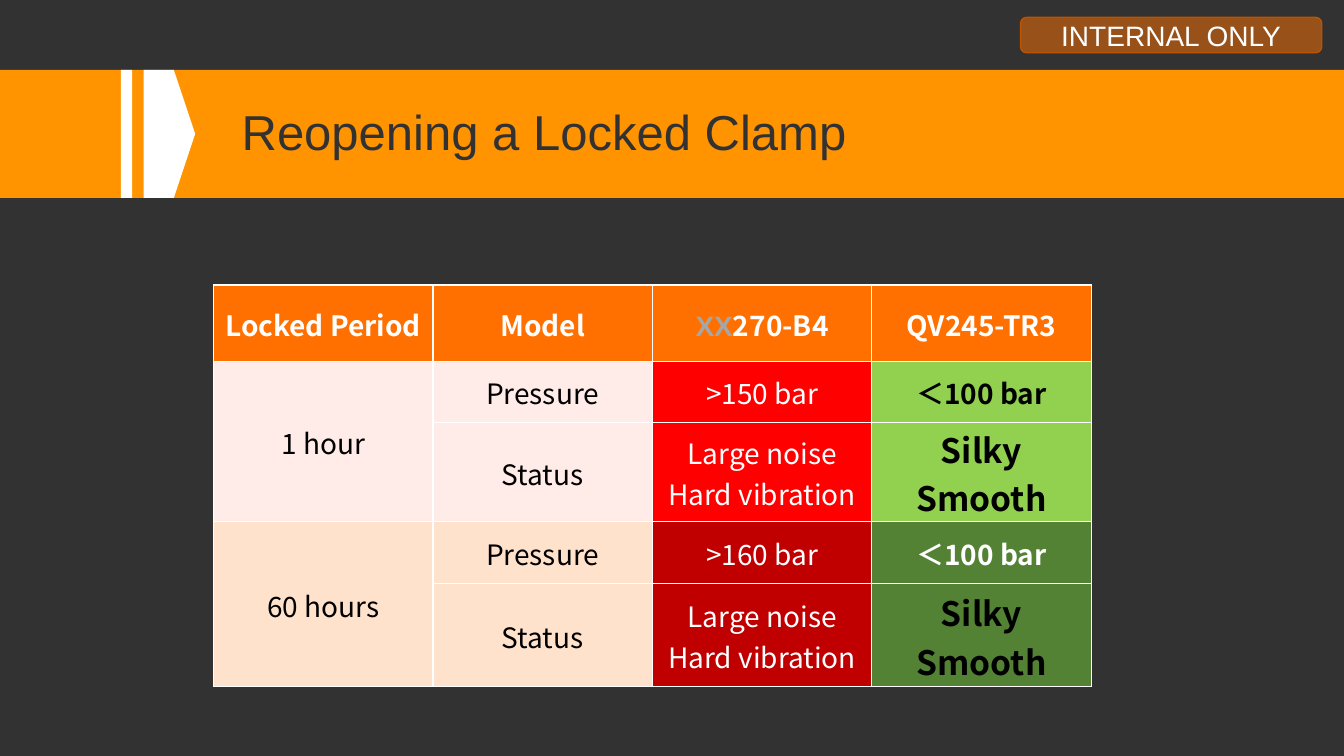
"""Build the slide comparing the reopening of locked clamps."""
from dataclasses import dataclass

import lxml.etree
import pptx
import pptx.dml.color
import pptx.enum.shapes
import pptx.enum.text
import pptx.oxml.ns
import pptx.shapes.autoshape
import pptx.slide
import pptx.table
import pptx.text.text
import pptx.util

Cm = pptx.util.Cm
qn = pptx.oxml.ns.qn
Shape = pptx.shapes.autoshape.Shape
Preset = pptx.enum.shapes.MSO_SHAPE
Align = pptx.enum.text.PP_ALIGN
Anchor = pptx.enum.text.MSO_ANCHOR


@dataclass(frozen=True)
class Theme:
    dark: str = "323232"
    white: str = "FFFFFF"
    black: str = "000000"
    grey: str = "A6A6A6"
    band: str = "FF9300"
    header: str = "FF7000"
    badge_line: str = "BD5300"
    hour_tint: str = "FFEBE7"
    hours_tint: str = "FFE2CC"
    hour_bad: str = "FF0000"
    hours_bad: str = "C00000"
    hour_good: str = "92D050"
    hours_good: str = "548235"
    title_size: float = 35
    body_size: float = 20
    strong_size: float = 24
    plain_font: str = "Arial"
    table_font: str = "Noto Sans CJK TC"


THEME = Theme()


@dataclass(frozen=True)
class Box:
    left: float
    top: float
    width: float
    height: float

    def lengths(self) -> tuple[pptx.util.Length, ...]:
        return Cm(self.left), Cm(self.top), Cm(self.width), Cm(self.height)


@dataclass(frozen=True)
class Words:
    text: str
    color: str
    size: float = THEME.body_size
    font: str = THEME.table_font
    bold: bool = False


@dataclass(frozen=True)
class Entry:
    fill: str
    lines: tuple[tuple[Words, ...], ...]
    rows: int = 1


@dataclass(frozen=True)
class Period:
    label: str
    bad_pressure: str
    tint: str
    bad: str
    good: str
    good_text: str


BAND = Box(0, 1.76, 33.87, 3.23)
STRIPE = Box(3.05, BAND.top, 0.28, BAND.height)
ARROW = Box(3.62, BAND.top, 1.3, BAND.height)
ARROW_SHOULDER = 0.76
TITLE = Box(5.84, 1.78, 25.7, BAND.height)
BADGE = Box(25.72, 0.44, 7.59, 0.89)
RESULTS = Box(5.38, 7.18, 22.12, 10.03)
ROW_HEIGHTS = (1.92, 1.54, 2.41, 1.55, 2.61)
COLUMN_COUNT = 4

PERIODS = (
    Period("1 hour", ">150 bar", THEME.hour_tint, THEME.hour_bad, THEME.hour_good, THEME.black),
    Period("60 hours", ">160 bar", THEME.hours_tint, THEME.hours_bad, THEME.hours_good, THEME.white),
)


def rgb(color: str) -> pptx.dml.color.RGBColor:
    return pptx.dml.color.RGBColor.from_string(color)


def write(paragraph: pptx.text.text._Paragraph, words: Words) -> None:
    run = paragraph.add_run()
    run.text = words.text
    run.font.size = pptx.util.Pt(words.size)
    run.font.name = words.font
    run.font.bold = words.bold
    run.font.color.rgb = rgb(words.color)
    east_asian = lxml.etree.Element(qn("a:ea"), typeface=words.font)
    run._r.rPr.find(qn("a:latin")).addnext(east_asian)


def paint(shape: Shape, color: str) -> None:
    shape.shadow.inherit = False
    shape.fill.solid()
    shape.fill.fore_color.rgb = rgb(color)
    shape.line.fill.background()


def add_block(slide: pptx.slide.Slide, preset: Preset, box: Box, color: str) -> Shape:
    block = slide.shapes.add_shape(preset, *box.lengths())
    paint(block, color)
    return block


def add_arrow(slide: pptx.slide.Slide) -> None:
    shoulder = ARROW.left + ARROW_SHOULDER
    bottom = ARROW.top + ARROW.height
    tip = (Cm(ARROW.left + ARROW.width), Cm(ARROW.top + ARROW.height / 2))
    outline = slide.shapes.build_freeform(Cm(ARROW.left), Cm(ARROW.top))
    outline.add_line_segments(
        [(Cm(ARROW.left), Cm(bottom)), (Cm(shoulder), Cm(bottom)), tip, (Cm(shoulder), Cm(ARROW.top))]
    )
    paint(outline.convert_to_shape(), THEME.white)


def add_badge(slide: pptx.slide.Slide) -> None:
    badge = add_block(slide, Preset.ROUNDED_RECTANGLE, BADGE, THEME.header)
    lxml.etree.SubElement(badge.element.spPr.find(".//" + qn("a:srgbClr")), qn("a:alpha"), val="50000")
    badge.line.color.rgb = rgb(THEME.badge_line)
    badge.line.width = pptx.util.Pt(1)
    badge.text_frame.vertical_anchor = Anchor.MIDDLE
    label = badge.text_frame.paragraphs[0]
    label.alignment = Align.CENTER
    write(label, Words("INTERNAL ONLY", THEME.white, font=THEME.plain_font))


def add_title(slide: pptx.slide.Slide) -> None:
    frame = slide.shapes.add_textbox(*TITLE.lengths()).text_frame
    frame.word_wrap = True
    frame.vertical_anchor = Anchor.MIDDLE
    heading = frame.paragraphs[0]
    heading.line_spacing = 0.9
    write(heading, Words("Reopening a Locked Clamp", THEME.dark, THEME.title_size, THEME.plain_font))


def header_row() -> list[Entry]:
    period, model, ours = (
        (Words(text, THEME.white, bold=True),) for text in ("Locked Period", "Model", "QV245-TR3")
    )
    rival = (
        Words("XX", THEME.grey, font=THEME.plain_font, bold=True),
        Words("270-B4", THEME.white, bold=True),
    )
    return [Entry(THEME.header, (line,)) for line in (period, model, rival, ours)]


def entry(
    fill: str, color: str, *texts: str, rows: int = 1, size: float = THEME.body_size, bold: bool = False
) -> Entry:
    return Entry(fill, tuple((Words(text, color, size, bold=bold),) for text in texts), rows)


def period_rows(period: Period) -> list[list[Entry]]:
    pressure = [
        entry(period.tint, THEME.black, period.label, rows=2),
        entry(period.tint, THEME.black, "Pressure"),
        entry(period.bad, THEME.white, period.bad_pressure),
        entry(period.good, period.good_text, "＜100 bar", bold=True),
    ]
    status = [
        Entry(period.tint, ()),
        entry(period.tint, THEME.black, "Status"),
        entry(period.bad, THEME.white, "Large noise", "Hard vibration"),
        entry(period.good, THEME.black, "Silky", "Smooth", size=THEME.strong_size, bold=True),
    ]
    return [pressure, status]


def fill_cell(cell: pptx.table._Cell, content: Entry) -> None:
    cell.vertical_anchor = Anchor.MIDDLE
    cell.margin_left = cell.margin_right = cell.margin_top = Cm(0.05)
    cell.margin_bottom = Cm(0)
    properties = cell._tc.get_or_add_tcPr()
    for side in ("a:lnL", "a:lnR", "a:lnT", "a:lnB"):
        border = lxml.etree.SubElement(properties, qn(side), w=str(pptx.util.Pt(1)))
        solid = lxml.etree.SubElement(border, qn("a:solidFill"))
        lxml.etree.SubElement(solid, qn("a:srgbClr"), val=THEME.white)
    cell.fill.solid()
    cell.fill.fore_color.rgb = rgb(content.fill)
    for index, line in enumerate(content.lines):
        paragraph = cell.text_frame.add_paragraph() if index else cell.text_frame.paragraphs[0]
        paragraph.alignment = Align.CENTER
        for words in line:
            write(paragraph, words)


def add_results(slide: pptx.slide.Slide) -> None:
    results = slide.shapes.add_table(len(ROW_HEIGHTS), COLUMN_COUNT, *RESULTS.lengths()).table
    results.horz_banding = False
    for row, height in zip(results.rows, ROW_HEIGHTS):
        row.height = Cm(height)
    contents = [header_row()] + [row for period in PERIODS for row in period_rows(period)]
    for row_index, row in enumerate(contents):
        for column_index, content in enumerate(row):
            cell = results.cell(row_index, column_index)
            fill_cell(cell, content)
            if content.rows > 1:
                cell.merge(results.cell(row_index + content.rows - 1, column_index))


def main() -> None:
    deck = pptx.Presentation()
    deck.slide_width, deck.slide_height = Cm(33.87), Cm(19.05)
    slide = deck.slides.add_slide(deck.slide_layouts[6])
    slide.background.fill.solid()
    slide.background.fill.fore_color.rgb = rgb(THEME.dark)
    add_block(slide, Preset.RECTANGLE, BAND, THEME.band)
    add_block(slide, Preset.RECTANGLE, STRIPE, THEME.white)
    add_arrow(slide)
    add_badge(slide)
    add_results(slide)
    add_title(slide)
    deck.save("out.pptx")


if __name__ == "__main__":
    main()
